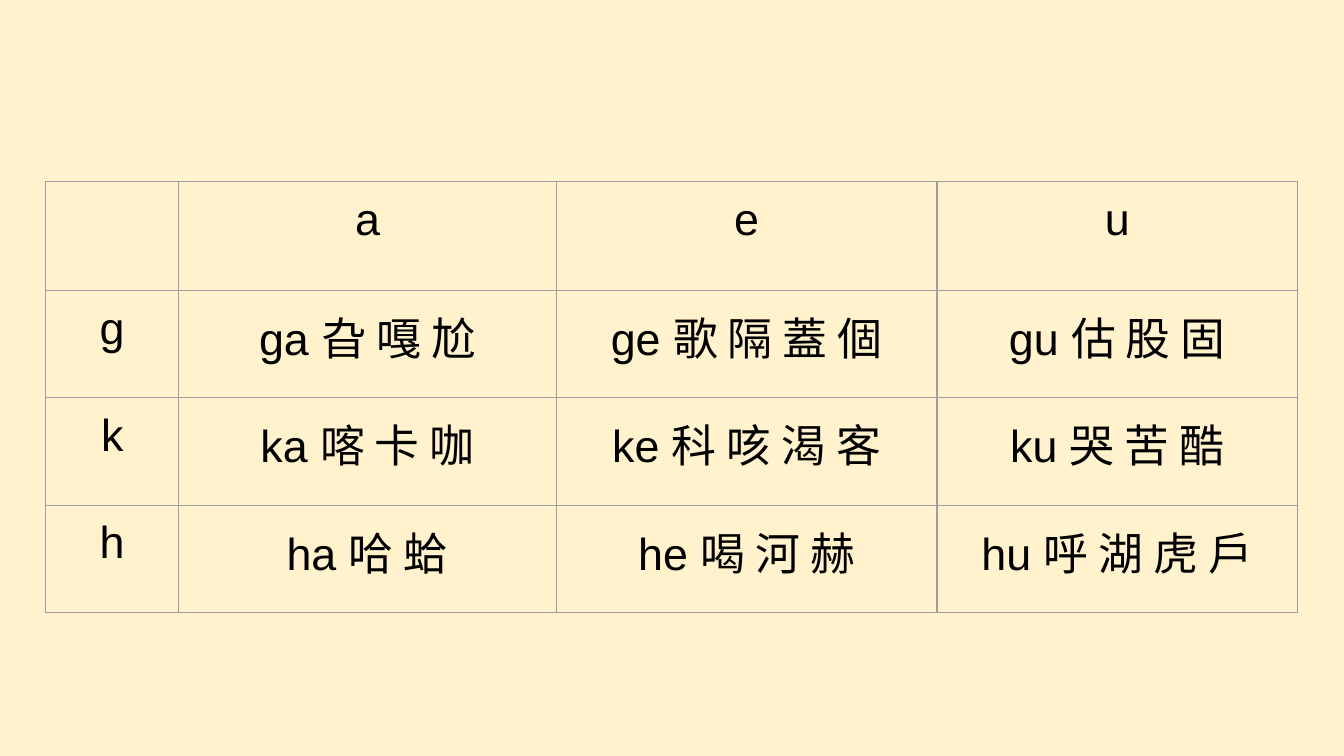
from lxml.etree import SubElement
from pptx import Presentation
from pptx.dml.color import RGBColor
from pptx.enum.text import MSO_ANCHOR as Anchor, PP_ALIGN as Align
from pptx.oxml.ns import qn
from pptx.util import Cm, Pt

CREAM = RGBColor(0xFF, 0xF2, 0xCC)
GREY = RGBColor(0x9E, 0x9E, 0x9E)
BLACK = RGBColor(0, 0, 0)

SYLLABLES = [
    ["", "a", "e", "u"],
    ["g", "ga 旮 嘎 尬", "ge 歌 隔 蓋 個", "gu 估 股 固"],
    ["k", "ka 喀 卡 咖", "ke 科 咳 渴 客", "ku 哭 苦 酷"],
    ["h", "ha 哈 蛤", "he 喝 河 赫", "hu 呼 湖 虎 戶"],
]
COLUMN_WIDTHS = [2.52, 7.13, 7.2, 6.81]
ROW_HEIGHTS = [2.06, 2.03, 2.03, 2.03]


class SlideBuilder:
    font_name = "Arial"
    font_size = Pt(24)
    cell_margin = Cm(0.25)
    border_width = Pt(0.75)

    def __init__(self, slide):
        self.slide = slide

    def background(self, color):
        fill = self.slide.background.fill
        fill.solid()
        fill.fore_color.rgb = color

    def table(self, left, top, widths, heights, content):
        grid = self.slide.shapes.add_table(
            len(heights), len(widths), Cm(left), Cm(top),
            Cm(sum(widths)), Cm(sum(heights))).table
        grid.first_row = False
        grid.horz_banding = False
        for column, width in zip(grid.columns, widths):
            column.width = Cm(width)
        for row, height, words in zip(grid.rows, heights, content):
            row.height = Cm(height)
            for cell, word in zip(row.cells, words):
                self.cell(cell, word)

    def cell(self, cell, word):
        cell.margin_left = cell.margin_right = self.cell_margin
        cell.margin_top = cell.margin_bottom = self.cell_margin
        cell.vertical_anchor = Anchor.TOP
        self.borders(cell)
        cell.fill.background()
        paragraph = cell.text_frame.paragraphs[0]
        paragraph.alignment = Align.CENTER
        if word:
            run = paragraph.add_run()
            run.text = word
            run.font.name = self.font_name
            run.font.size = self.font_size
            run.font.color.rgb = BLACK

    def borders(self, cell):
        properties = cell._tc.get_or_add_tcPr()
        for side in ("a:lnL", "a:lnR", "a:lnT", "a:lnB"):
            line = SubElement(properties, qn(side), w=str(self.border_width))
            fill = SubElement(line, qn("a:solidFill"))
            SubElement(fill, qn("a:srgbClr"), val=str(GREY))


def main():
    deck = Presentation()
    deck.slide_width, deck.slide_height = Cm(25.4), Cm(14.29)
    builder = SlideBuilder(deck.slides.add_slide(deck.slide_layouts[6]))
    builder.background(CREAM)
    builder.table(0.86, 3.43, COLUMN_WIDTHS, ROW_HEIGHTS, SYLLABLES)
    deck.save("out.pptx")


if __name__ == "__main__":
    main()
